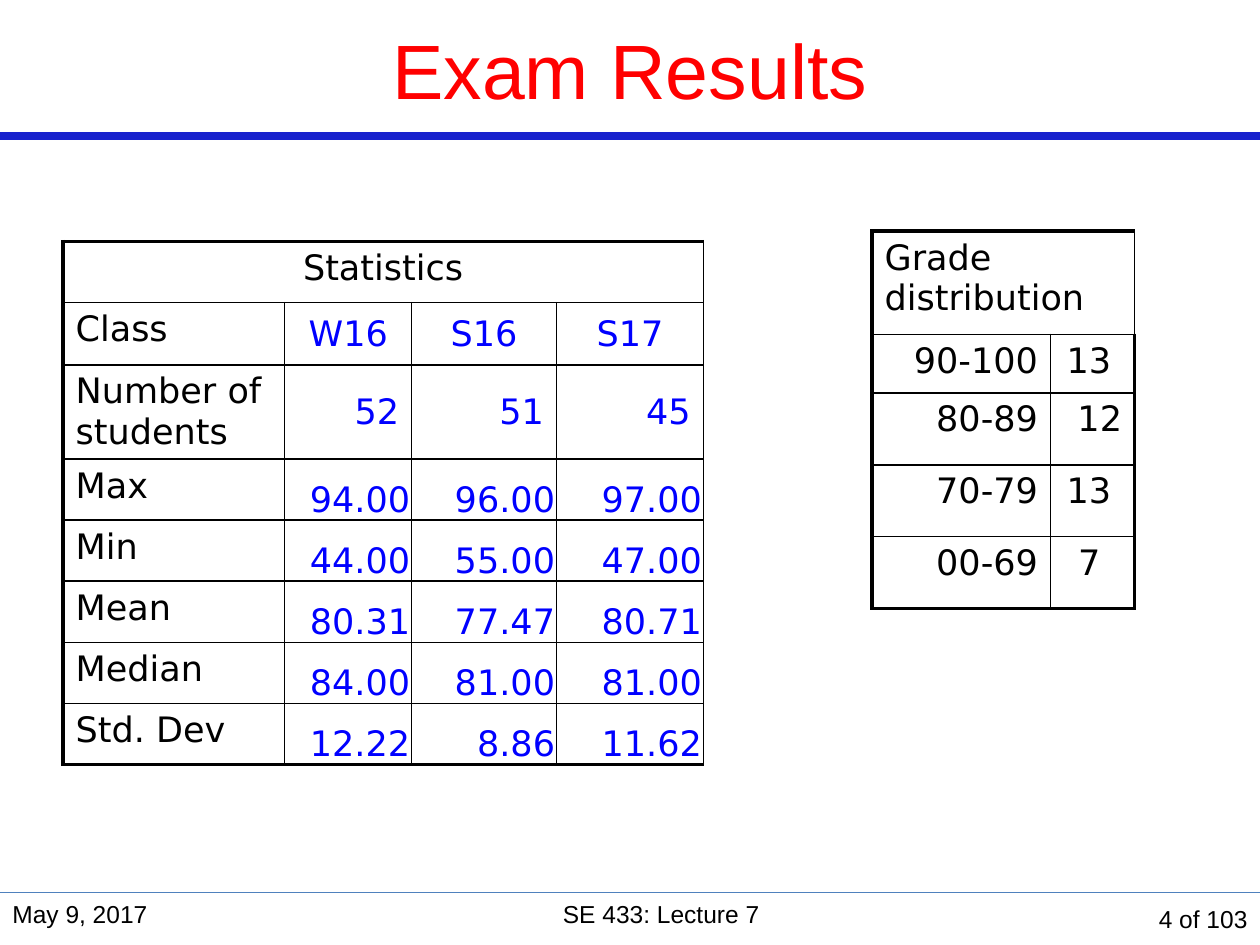
from lxml import etree
from pptx import Presentation
from pptx.dml.color import RGBColor
from pptx.enum.shapes import MSO_CONNECTOR
from pptx.enum.text import MSO_ANCHOR, PP_ALIGN
from pptx.oxml.ns import qn
from pptx.util import Cm, Pt

LEFT, CENTER, RIGHT = PP_ALIGN.LEFT, PP_ALIGN.CENTER, PP_ALIGN.RIGHT
TOP, MIDDLE, BOTTOM = MSO_ANCHOR.TOP, MSO_ANCHOR.MIDDLE, MSO_ANCHOR.BOTTOM
STRAIGHT = MSO_CONNECTOR.STRAIGHT

COLORS = {"black": "000000", "title": "FF0000", "value": "0000FF",
          "rule": "1822CD", "footer_rule": "4F81BD"}
THIN, THICK = 1, 2.25
PAGE_WIDTH, PAGE_HEIGHT = 25.4, 19.05
TITLE_HEIGHT, FOOTER_TOP = 2.75, 17.99
SPACE_WIDTH = 0.22
CELL_INSET = 0.25


class PageBuilder:
    title_font = "Arial"
    table_font = "DejaVu Sans"

    def __init__(self, page):
        self.page = page

    def format_text(self, frame, text, size, font, color="black", align=LEFT):
        frame.word_wrap = True
        para = frame.paragraphs[0]
        para.text = text
        para.alignment = align
        para.font.size = Pt(size)
        para.font.name = font
        para.font.color.rgb = RGBColor.from_string(COLORS[color])

    def title(self, text):
        box = self.page.shapes.title
        box.left, box.top = Cm(0), Cm(0)
        box.width, box.height = Cm(PAGE_WIDTH), Cm(TITLE_HEIGHT)
        box.text_frame.vertical_anchor = MIDDLE
        self.format_text(box.text_frame, text, 44, self.title_font, "title", CENTER)

    def rule(self, y, color, width):
        line = self.page.shapes.add_connector(
            STRAIGHT, Cm(0), Cm(y), Cm(PAGE_WIDTH), Cm(y))
        line.line.color.rgb = RGBColor.from_string(COLORS[color])
        line.line.width = Pt(width)
        etree.SubElement(line._element.spPr, qn("a:effectLst"))

    def footer(self, text, left, width, align, anchor=TOP):
        box = self.page.shapes.add_textbox(
            Cm(left), Cm(FOOTER_TOP), Cm(width), Cm(PAGE_HEIGHT - FOOTER_TOP))
        box.text_frame.vertical_anchor = anchor
        self.format_text(box.text_frame, text, 14, self.title_font, align=align)

    def table(self, left, top, widths, heights):
        table = self.page.shapes.add_table(
            len(heights), len(widths), Cm(left), Cm(top),
            Cm(sum(widths)), Cm(sum(heights))).table
        table.first_row = table.horz_banding = False
        for column, width in zip(table.columns, widths):
            column.width = Cm(width)
        for row, height in zip(table.rows, heights):
            row.height = Cm(height)
        table.cell(0, 0).merge(table.cell(0, len(widths) - 1))
        return table

    def cell(self, cell, text, color="black", align=LEFT, anchor=TOP):
        cell.vertical_anchor = anchor
        self.format_text(cell.text_frame, text, 20, self.table_font, color, align)

    def borders(self, table, right_body=THIN):
        last_row, last_column = len(table.rows) - 1, len(table.columns) - 1
        for r in range(last_row + 1):
            for c in range(last_column + 1):
                right = THICK if r == 0 else right_body
                sides = {"L": THICK if c == 0 else THIN,
                         "R": right if c == last_column else THIN,
                         "T": THICK if r == 0 else THIN,
                         "B": THICK if r == last_row else THIN}
                cell = table.cell(r, c)
                props = cell._tc.get_or_add_tcPr()
                for side, width in sides.items():
                    line = etree.SubElement(props, qn(f"a:ln{side}"), w=str(Pt(width)))
                    fill = etree.SubElement(line, qn("a:solidFill"))
                    etree.SubElement(fill, qn("a:srgbClr"), val=COLORS["black"])
                cell.fill.background()


def add_statistics(builder):
    rows = [
        ("Class", "W16", "S16", "S17"),
        ("Number of students", "52", "51", "45"),
        ("Max", "94.00", "96.00", "97.00"),
        ("Min", "44.00", "55.00", "47.00"),
        ("Mean", "80.31", "77.47", "80.71"),
        ("Median", "84.00", "81.00", "81.00"),
        ("Std. Dev", "12.22", "8.86", "11.62"),
    ]
    table = builder.table(1.27, 4.87, [4.47, 2.56, 2.92, 2.96],
                          [1.23, 1.26, 1.89] + [1.23] * 5)
    builder.cell(table.cell(0, 0), "Statistics", align=CENTER)
    for r, (label, *values) in enumerate(rows, 1):
        builder.cell(table.cell(r, 0), label, anchor=MIDDLE if r == 2 else TOP)
        for c, value in enumerate(values, 1):
            cell = table.cell(r, c)
            builder.cell(cell, value, "value", CENTER if r == 1 else RIGHT,
                         MIDDLE if r <= 2 else BOTTOM)
            if r > 2:
                cell.margin_left = cell.margin_right = cell.margin_top = Cm(0.03)
                cell.margin_bottom = Cm(0)
    builder.borders(table)


def add_grades(builder):
    grades = [("90-100", "13", 1), ("80-89", "12", 0),
              ("70-79", "13", 1), ("00-69", "7", 2)]
    table = builder.table(17.58, 4.66, [3.6, 1.69], [2.08, 1.18] + [1.45] * 3)
    builder.cell(table.cell(0, 0), "Grade distribution")
    for r, (band, count, indent) in enumerate(grades, 1):
        builder.cell(table.cell(r, 0), band, align=RIGHT)
        count_cell = table.cell(r, 1)
        builder.cell(count_cell, count, align=RIGHT)
        count_cell.margin_right = Cm(CELL_INSET + indent * SPACE_WIDTH)
    builder.borders(table, right_body=THICK)


def main():
    deck = Presentation()
    deck.slide_width, deck.slide_height = Cm(PAGE_WIDTH), Cm(PAGE_HEIGHT)
    builder = PageBuilder(deck.slides.add_slide(deck.slide_layouts[5]))
    builder.rule(TITLE_HEIGHT, "rule", 4.5)
    builder.rule(FOOTER_TOP, "footer_rule", 0.75)
    builder.title("Exam Results")
    add_statistics(builder)
    add_grades(builder)
    builder.footer("May 9, 2017", 0, 5.5, LEFT)
    builder.footer("SE 433: Lecture 7", 5.5, 15.66, CENTER)
    builder.footer("4 of 103", 21.16, 4.24, RIGHT, MIDDLE)
    deck.save("out.pptx")


if __name__ == "__main__":
    main()
